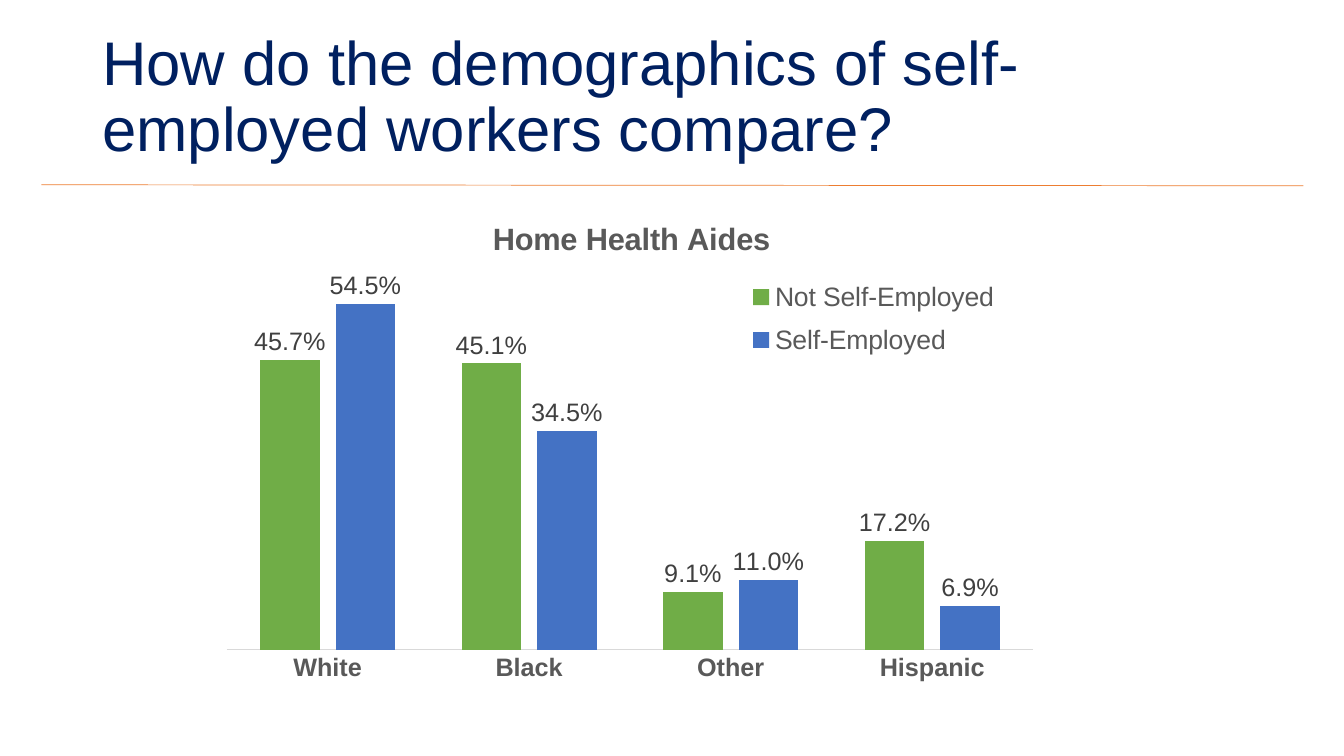
from lxml import etree
from pptx import Presentation
from pptx.chart.data import CategoryChartData
from pptx.dml.color import RGBColor
from pptx.enum.chart import XL_CHART_TYPE as ChartType, XL_LABEL_POSITION as LabelPosition
from pptx.enum.chart import XL_LEGEND_POSITION as LegendPosition, XL_TICK_MARK as TickMark
from pptx.enum.shapes import MSO_CONNECTOR as Connector
from pptx.enum.text import MSO_ANCHOR as Anchor
from pptx.oxml.ns import qn
from pptx.util import Pt

COLORS = {
    "navy": "002060", "orange": "ED7D31", "green": "70AD47", "blue": "4472C4",
    "gray": "595959", "dark": "404040", "axis": "D9D9D9",
}
PERCENT = "0.0%"


class SlideBuilder:
    def __init__(self, page, font="Arial"):
        self.page = page
        self.font = font

    def color(self, name):
        return RGBColor.from_string(COLORS[name])

    def style(self, font, size, color, bold=False):
        font.name, font.size, font.bold = self.font, Pt(size), bold
        font.color.rgb = self.color(color)

    def line(self, start, end, color, width):
        rule = self.page.shapes.add_connector(
            Connector.STRAIGHT, *(Pt(v) for v in (*start, *end)))
        rule.line.color.rgb = self.color(color)
        rule.line.width = Pt(width)
        etree.SubElement(rule._element.spPr, qn("a:effectLst"))

    def text(self, frame, words, size, color):
        box = self.page.shapes.add_textbox(*(Pt(v) for v in frame)).text_frame
        box.word_wrap = True
        box.vertical_anchor = Anchor.MIDDLE
        para = box.paragraphs[0]
        para.text = words
        para.line_spacing = 0.9
        self.style(para.font, size, color)

    def place(self, element, index, **fractions):
        """Set a manual layout, in fractions of the chart area."""
        for old in element.findall(qn("c:layout")):
            element.remove(old)
        layout = etree.Element(qn("c:layout"))
        manual = etree.SubElement(layout, qn("c:manualLayout"))
        if index == 0:
            etree.SubElement(manual, qn("c:layoutTarget")).set("val", "inner")
        for axis in "xy":
            etree.SubElement(manual, qn(f"c:{axis}Mode")).set("val", "edge")
        for key, value in fractions.items():
            etree.SubElement(manual, qn(f"c:{key}")).set("val", str(value))
        element.insert(index, layout)

    def column_chart(self, frame, title, categories, series):
        data = CategoryChartData(number_format=PERCENT)
        data.categories = categories
        for name, values, _ in series:
            data.add_series(name, values)
        chart = self.page.shapes.add_chart(
            ChartType.COLUMN_CLUSTERED, *(Pt(v) for v in frame), data).chart
        chart.font.name, chart.font.size = self.font, Pt(10)

        # Title and legend
        chart.has_title = True
        heading = chart.chart_title.text_frame
        heading.text = title
        self.style(heading.paragraphs[0].font, 22, "gray", bold=True)
        self.place(chart.chart_title._element, 1, x=0.33, y=0.04)
        chart.has_legend = True
        chart.legend.position = LegendPosition.BOTTOM
        chart.legend.include_in_layout = False
        self.style(chart.legend.font, 19, "gray")
        self.place(chart.legend._element, 1, x=0.63, y=0.14, w=0.32, h=0.18)

        # Axes
        values_axis = chart.value_axis
        values_axis.minimum_scale, values_axis.maximum_scale = 0, 0.6
        values_axis.has_major_gridlines = False
        values_axis.visible = False
        groups = chart.category_axis
        groups.major_tick_mark = groups.minor_tick_mark = TickMark.NONE
        groups.format.line.color.rgb = self.color("axis")
        groups.format.line.width = Pt(0.75)
        self.style(groups.tick_labels.font, 18, "gray", bold=True)

        # Columns and their labels
        plot = chart.plots[0]
        plot.gap_width, plot.overlap, plot.vary_by_categories = 112, -27, False
        self.place(plot._element.getparent(), 0, x=0.02, y=0.14, w=0.96, h=0.69)
        for bars, (_, _, color) in zip(plot.series, series):
            bars.format.fill.solid()
            bars.format.fill.fore_color.rgb = self.color(color)
            labels = bars.data_labels
            labels.show_value = True
            labels.position = LabelPosition.OUTSIDE_END
            labels.number_format, labels.number_format_is_linked = PERCENT, False
            self.style(labels.font, 18, "dark")


def main():
    deck = Presentation()
    deck.slide_width, deck.slide_height = Pt(960), Pt(540)
    slide = SlideBuilder(deck.slides.add_slide(deck.slide_layouts[6]))

    # Heading
    slide.line((29.5, 132), (931, 132.7), "orange", 0.5)
    slide.text((66, 18, 828, 104.4),
               "How do the demographics of self-employed workers compare?", 44, "navy")

    # Demographic comparison
    slide.column_chart(
        (150, 136.8, 600, 394.5), "Home Health Aides",
        ["White", "Black", "Other", "Hispanic"],
        [("Not Self-Employed", (0.457, 0.451, 0.091, 0.172), "green"),
         ("Self-Employed", (0.545, 0.345, 0.11, 0.069), "blue")])

    deck.save("out.pptx")


if __name__ == "__main__":
    main()
